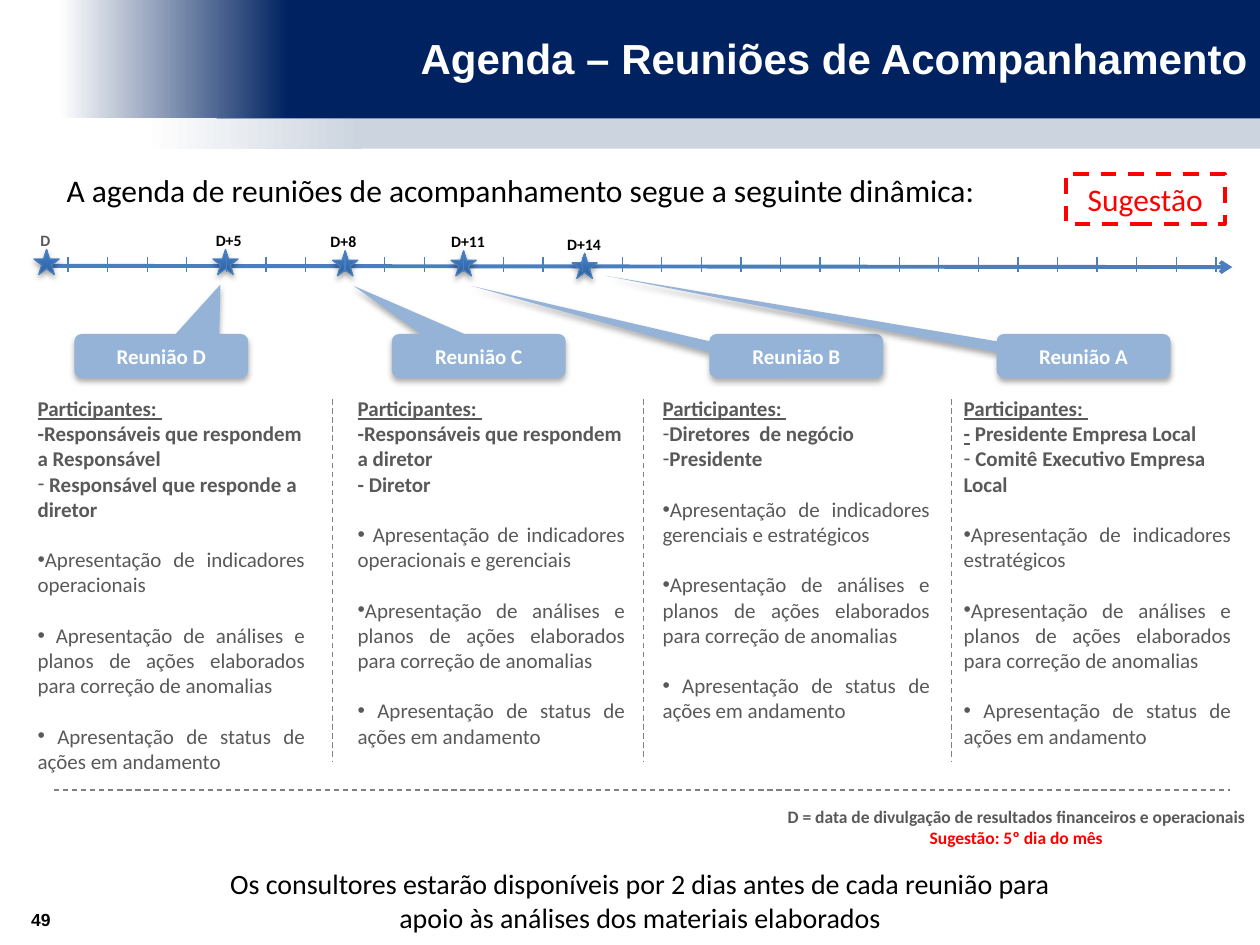
from lxml.etree import SubElement
from pptx import Presentation
from pptx.dml.color import RGBColor
from pptx.enum.dml import MSO_LINE
from pptx.enum.shapes import MSO_CONNECTOR, MSO_SHAPE
from pptx.enum.text import MSO_ANCHOR, PP_ALIGN
from pptx.oxml.ns import qn
from pptx.util import Inches, Pt

COLUMNS, ROWS = 100, 75
WIDTH, HEIGHT = Inches(10), Inches(7.5)
COLORS = {
    "white": "FFFFFF", "black": "000000", "navy": "002261", "mist": "CCD4DF",
    "axis": "4B7EBC", "star_dark": "2F5F99", "star_light": "3D7CC7",
    "callout": "95B3D7", "text": "595959", "rule": "808080", "red": "FF0000",
}
ANALYSES = "Apresentação de análises e planos de ações elaborados para correção de anomalias"
STATUS = " Apresentação de status de ações em andamento"
MILESTONES = [
    ("D", 2.7, 19.8, 2.2, 17.8, 2.8, "text"),
    ("D+5", 16.9, 19.8, 16.1, 17.8, 4.1, "black"),
    ("D+8", 26.4, 19.9, 25.2, 17.9, 4.1, "black"),
    ("D+11", 35.8, 19.9, 34.8, 17.9, 4.7, "black"),
    ("D+14", 45.4, 20.1, 44, 18.1, 4.7, "black"),
]
CALLOUTS = [
    ("Reunião D", 5.9, 0.34, -1.62),
    ("Reunião C", 31.1, -0.72, -1.59),
    ("Reunião B", 56.3, -1.87, -1.59),
    ("Reunião A", 79.1, -2.75, -1.82),
]
MEETINGS = [
    (2, [("", ["-Responsáveis que respondem a Responsável"]),
         ("-", [" Responsável que responde a diretor"])],
     ["Apresentação de indicadores operacionais", " " + ANALYSES, STATUS]),
    (27.4, [("", ["-Responsáveis que respondem a diretor"]), ("", ["- Diretor"])],
     [" Apresentação de indicadores operacionais e gerenciais", ANALYSES, STATUS]),
    (51.6, [("-", ["Diretores  de negócio"]), ("-", ["Presidente"])],
     ["Apresentação de indicadores gerenciais e estratégicos", ANALYSES, STATUS]),
    (75.5, [("", ["-", " Presidente Empresa Local"]),
            ("-", [" Comitê Executivo Empresa Local"])],
     ["Apresentação de indicadores estratégicos", ANALYSES, STATUS]),
]


def across(columns):
    return round(WIDTH * columns / COLUMNS)


def down(rows):
    return round(HEIGHT * rows / ROWS)


def area(left, top, width, height):
    return across(left), down(top), across(width), down(height)


def rgb(name):
    return RGBColor.from_string(COLORS[name])


def assign(target, values):
    for name, value in values.items():
        setattr(target, name, value)


def add_span(para, text, color, **font):
    span = para.add_run()
    span.text = text
    assign(span.font, {"name": "Calibri", **font})
    span.font.color.rgb = rgb(color)


def add_bullet(para, symbol):
    properties = para._p.get_or_add_pPr()
    properties.set("marL", "0")
    properties.set("indent", "0")
    SubElement(properties, qn("a:buFont"), typeface="Arial")
    SubElement(properties, qn("a:buChar"), char=symbol)


def next_para(frame):
    return frame.add_paragraph() if frame.paragraphs[0].runs else frame.paragraphs[0]


def add_text(page, place, lines, align, wrap=True, anchor=MSO_ANCHOR.TOP, **font):
    box = page.shapes.add_textbox(*area(*place))
    assign(box.text_frame, {"word_wrap": wrap, "vertical_anchor": anchor})
    for text, color in lines:
        para = next_para(box.text_frame)
        para.alignment = align
        add_span(para, text, color, **font)


def paint(fill, colors, stop=1, angle=0):
    if len(colors) == 1:
        fill.solid()
        fill.fore_color.rgb = rgb(colors[0])
        return
    fill.gradient()
    fill.gradient_angle = angle
    for mark, color, position in zip(fill.gradient_stops, colors, (0, stop)):
        mark.color.rgb = rgb(color)
        mark.position = position


def add_shape(page, kind, place, colors=(), **gradient):
    shape = page.shapes.add_shape(kind, *area(*place))
    shape.shadow.inherit = False
    shape.line.fill.background()
    if colors:
        paint(shape.fill, colors, **gradient)
    else:
        shape.fill.background()
    return shape


def add_shadow(shape, blur, distance, alpha):
    effects = shape._element.spPr.find(qn("a:effectLst"))
    shadow = SubElement(effects, qn("a:outerShdw"), blurRad=str(Pt(blur)),
                        dist=str(Pt(distance)), dir="5400000", rotWithShape="0")
    shade = SubElement(shadow, qn("a:srgbClr"), val=COLORS["black"])
    SubElement(shade, qn("a:alpha"), val=str(alpha * 1000))


def set_line(line, color, points, dash=None):
    line.color.rgb = rgb(color)
    assign(line, {"width": Pt(points), "dash_style": dash})


def add_line(page, start, end, color, points=0.75, dash=None, arrow=False):
    line = page.shapes.add_connector(
        MSO_CONNECTOR.STRAIGHT, across(start[0]), down(start[1]), across(end[0]), down(end[1]))
    set_line(line.line, color, points, dash)
    if arrow:
        SubElement(line.line._get_or_add_ln(), qn("a:tailEnd"), type="arrow")
    SubElement(line._element.spPr, qn("a:effectLst"))


def label_shape(shape, text, color, **font):
    para = shape.text_frame.paragraphs[0]
    para.alignment = PP_ALIGN.CENTER
    add_span(para, text, color, **font)


def add_header(page):
    for place, colors in [
        ((20.1, 8.8, 79.9, 3), ["mist"]),
        ((11.4, 8.8, 17.3, 3), ["white", "mist"]),
        ((17.2, 0, 82.8, 9.4), ["navy"]),
        ((4.7, 0, 18.2, 9.4), ["white", "navy"]),
    ]:
        add_shape(page, MSO_SHAPE.RECTANGLE, place, colors)
    arial = {"name": "Arial", "bold": True, "anchor": MSO_ANCHOR.MIDDLE}
    add_text(page, (10.6, 0, 89.4, 9.2), [("Agenda – Reuniões de Acompanhamento", "white")],
             PP_ALIGN.RIGHT, size=Pt(24), **arial)
    add_text(page, (0, 71, 5, 4), [("49", "black")], PP_ALIGN.RIGHT, size=Pt(10), **arial)


def add_milestone(page, text, left, top, text_left, text_top, text_width, color):
    star = add_shape(page, MSO_SHAPE.STAR_5_POINT, (left, top, 2, 2),
                     ["star_dark", "star_light"], stop=0.8, angle=90)
    set_line(star.line, "axis", 0.75)
    add_shadow(star, 3.1, 1.8, 35)
    add_text(page, (text_left, text_top, text_width, 2.5), [(text, color)],
             PP_ALIGN.CENTER, wrap=False, size=Pt(9), bold=True)


def add_callout(page, text, left, tip_x, tip_y):
    callout = add_shape(page, MSO_SHAPE.ROUNDED_RECTANGULAR_CALLOUT,
                        (left, 26.5, 13.8, 3.5), ["callout"])
    callout.adjustments[0], callout.adjustments[1] = tip_x, tip_y
    add_shadow(callout, 3.5, 2.2, 32)
    label_shape(callout, text, "white", size=Pt(12), bold=True)


def add_meeting(page, left, participants, topics):
    box = page.shapes.add_textbox(*area(left, 30.9, 23.2, 33.3))
    frame = box.text_frame
    frame.word_wrap = True
    bold = {"size": Pt(12), "bold": True}
    add_span(next_para(frame), "Participantes: ", "text", underline=True, **bold)
    for symbol, texts in participants:
        para = next_para(frame)
        if symbol:
            add_bullet(para, symbol)
        for text in texts:
            add_span(para, text, "text", underline=text == "-", **bold)
    for topic in topics:
        para = next_para(frame)
        add_bullet(para, "•")
        assign(para, {"alignment": PP_ALIGN.JUSTIFY, "space_before": Pt(14.4)})
        add_span(para, topic, "text", size=Pt(12))


def add_timeline(page):
    add_line(page, (3.3, 21.1), (97.8, 21.2), "axis", 2.25, arrow=True)
    for milestone in MILESTONES:
        add_milestone(page, *milestone)
    for callout in CALLOUTS:
        add_callout(page, *callout)
    for tick in range(30):
        column = 5.4 + tick * 91.1 / 29
        add_line(page, (column, 20.4), (column, 21.6), "axis")


def add_notes(page):
    add_text(page, (4.3, 13.1, 82.7, 4.7),
             [("A agenda de reuniões de acompanhamento segue a seguinte dinâmica:", "black")],
             PP_ALIGN.JUSTIFY, size=Pt(18))
    add_text(page, (14.6, 68.3, 72.4, 4.7),
             [("Os consultores estarão disponíveis por 2 dias antes de cada reunião para "
               "apoio às análises dos materiais elaborados", "black")],
             PP_ALIGN.CENTER, size=Pt(16))
    add_text(page, (61.3, 63.5, 38.7, 4.4),
             [("D = data de divulgação de resultados financeiros e operacionais", "text"),
              ("Sugestão: 5º dia do mês", "red")],
             PP_ALIGN.CENTER, wrap=False, size=Pt(10), bold=True)
    stamp = add_shape(page, MSO_SHAPE.RECTANGLE, (84.6, 13.8, 12.6, 4))
    set_line(stamp.line, "red", 2.25, MSO_LINE.DASH)
    label_shape(stamp, "Sugestão", "red", size=Pt(18))


def main():
    deck = Presentation()
    assign(deck, {"slide_width": WIDTH, "slide_height": HEIGHT})
    page = deck.slides.add_slide(deck.slide_layouts[6])
    add_header(page)
    add_timeline(page)
    for meeting in MEETINGS:
        add_meeting(page, *meeting)
    for column in (26.4, 51.1, 75.5):
        add_line(page, (column, 31.7), (column, 60.5), "rule", dash=MSO_LINE.DASH)
    add_line(page, (4.3, 62.7), (97.6, 62.7), "rule", dash=MSO_LINE.DASH)
    add_notes(page)
    deck.save("out.pptx")


if __name__ == "__main__":
    main()
